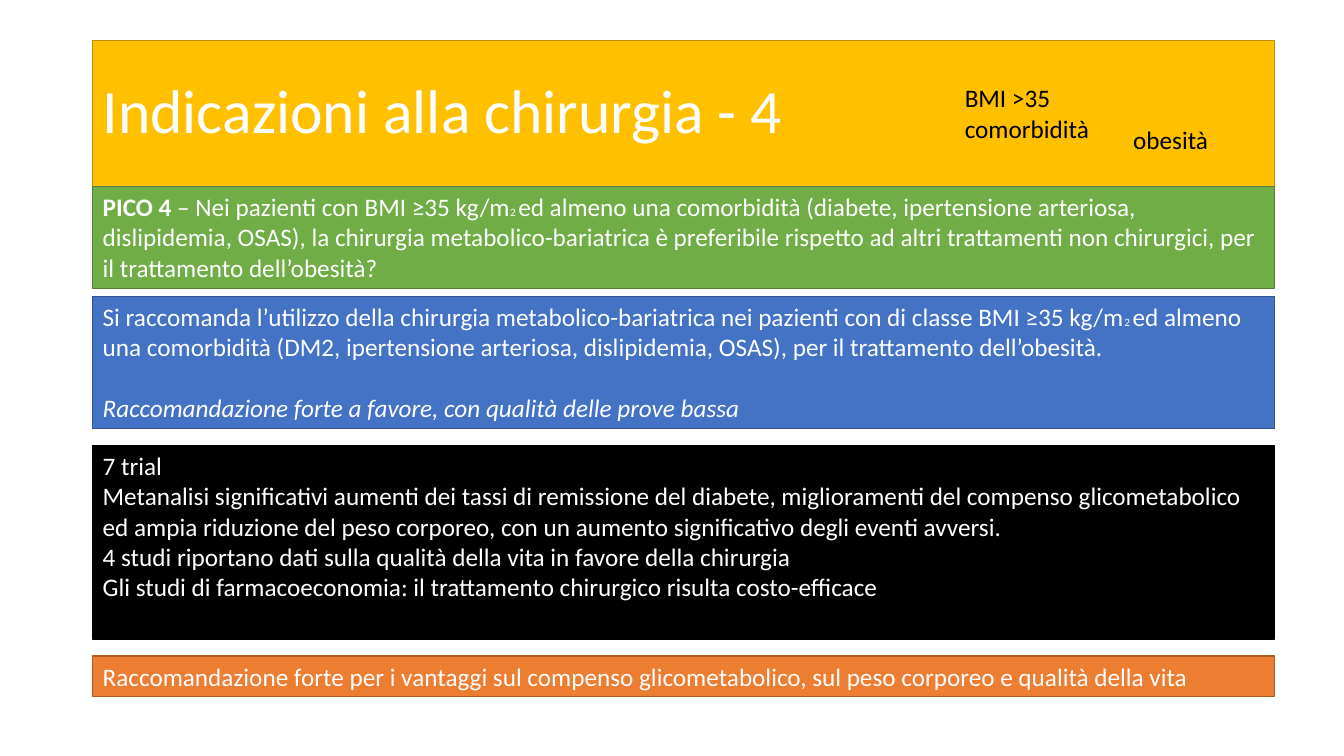
"""Build the slide on indications for metabolic-bariatric surgery."""
import pptx
import pptx.util
from pptx.dml.color import RGBColor
from pptx.enum.shapes import MSO_SHAPE
from pptx.enum.text import MSO_ANCHOR, PP_ALIGN
from pptx.util import Inches

WHITE = RGBColor(0xFF, 0xFF, 0xFF)
BLACK = RGBColor(0, 0, 0)
GOLD, GOLD_EDGE = RGBColor(0xFF, 0xC0, 0x00), RGBColor(0xBD, 0x8E, 0x00)
GREEN, GREEN_EDGE = RGBColor(0x70, 0xAD, 0x47), RGBColor(0x53, 0x80, 0x35)
BLUE, BLUE_EDGE = RGBColor(0x44, 0x72, 0xC4), RGBColor(0x32, 0x54, 0x91)
ORANGE, ORANGE_EDGE = RGBColor(0xED, 0x7D, 0x31), RGBColor(0xAF, 0x5C, 0x24)


class Deck:
    font = "Calibri"
    left, width = 0.92, 11.72

    def __init__(self):
        self.prs = pptx.Presentation()
        self.prs.slide_width = Inches(13.33)
        self.prs.slide_height = Inches(7.5)
        self.s = self.prs.slides.add_slide(self.prs.slide_layouts[6])

    def fill_text(self, tf, paragraphs, color, size=18):
        tf.word_wrap = True
        for i, runs in enumerate(paragraphs):
            p = tf.paragraphs[0] if i == 0 else tf.add_paragraph()
            p.alignment = PP_ALIGN.LEFT
            p.font.name = self.font
            p.font.size = pptx.util.Pt(size)
            p.font.color.rgb = color
            for text, bold, run_size in runs:
                r = p.add_run()
                r.text = text
                if bold:
                    r.font.bold = True
                if run_size:
                    r.font.size = pptx.util.Pt(run_size)

    def band(self, top, height, fill, edge, paragraphs, size=18, anchor=MSO_ANCHOR.TOP):
        sp = self.s.shapes.add_shape(MSO_SHAPE.RECTANGLE, Inches(self.left), Inches(top),
                                     Inches(self.width), Inches(height))
        sp.shadow.inherit = False
        sp.fill.solid()
        sp.fill.fore_color.rgb = fill
        sp.line.color.rgb = edge
        sp.line.width = pptx.util.Pt(1)
        sp.text_frame.vertical_anchor = anchor
        self.fill_text(sp.text_frame, paragraphs, WHITE, size)
        return sp.text_frame

    def label(self, left, top, width, height, paragraphs):
        sp = self.s.shapes.add_textbox(Inches(left), Inches(top), Inches(width), Inches(height))
        self.fill_text(sp.text_frame, paragraphs, BLACK)


def run(text, bold=False, size=None):
    return text, bold, size


def plain(*lines):
    return [[run(line)] for line in lines]


def main():
    deck = Deck()
    small_two = run("2 ", size=8)

    tf = deck.band(0.4, 1.45, GOLD, GOLD_EDGE, plain("Indicazioni alla chirurgia - 4"),
                   size=44, anchor=MSO_ANCHOR.MIDDLE)
    tf.paragraphs[0].line_spacing = 0.9

    deck.band(1.85, 1.01, GREEN, GREEN_EDGE, [[
        run("PICO 4 ", bold=True),
        run("– Nei pazienti con BMI ≥35 kg/m"),
        small_two,
        run("ed almeno una comorbidità (diabete, ipertensione arteriosa, dislipidemia, OSAS), "
            "la chirurgia metabolico-bariatrica è preferibile rispetto ad altri trattamenti "
            "non chirurgici, per il trattamento dell’obesità?"),
    ]])

    tf = deck.band(2.94, 1.31, BLUE, BLUE_EDGE, [
        [run("Si raccomanda l’utilizzo della chirurgia metabolico-bariatrica nei pazienti "
             "con di classe BMI ≥35 kg/m"),
         small_two,
         run("ed almeno una comorbidità (DM2, ipertensione arteriosa, dislipidemia, OSAS), "
             "per il trattamento dell’obesità.")],
        [run("Raccomandazione forte a favore, con qualità delle prove bassa")],
    ])
    tf.paragraphs[1].space_before = pptx.util.Pt(22)
    tf.paragraphs[1].font.italic = True

    deck.band(4.42, 1.92, BLACK, BLACK, plain(
        "7 trial",
        "Metanalisi significativi aumenti dei tassi di remissione del diabete, miglioramenti "
        "del compenso glicometabolico ed ampia riduzione del peso corporeo, con un aumento "
        "significativo degli eventi avversi.",
        "4 studi riportano dati sulla qualità della vita in favore della chirurgia",
        "Gli studi di farmacoeconomia: il trattamento chirurgico risulta costo-efficace"))

    deck.band(6.51, 0.4, ORANGE, ORANGE_EDGE, plain(
        "Raccomandazione forte per i vantaggi sul compenso glicometabolico, "
        "sul peso corporeo e qualità della vita"))

    deck.label(9.47, 0.77, 2.69, 0.71, plain("BMI >35", "comorbidità"))
    deck.label(11.14, 1.18, 1.02, 0.4, plain("obesità"))
    deck.prs.save("out.pptx")


if __name__ == "__main__":
    main()
